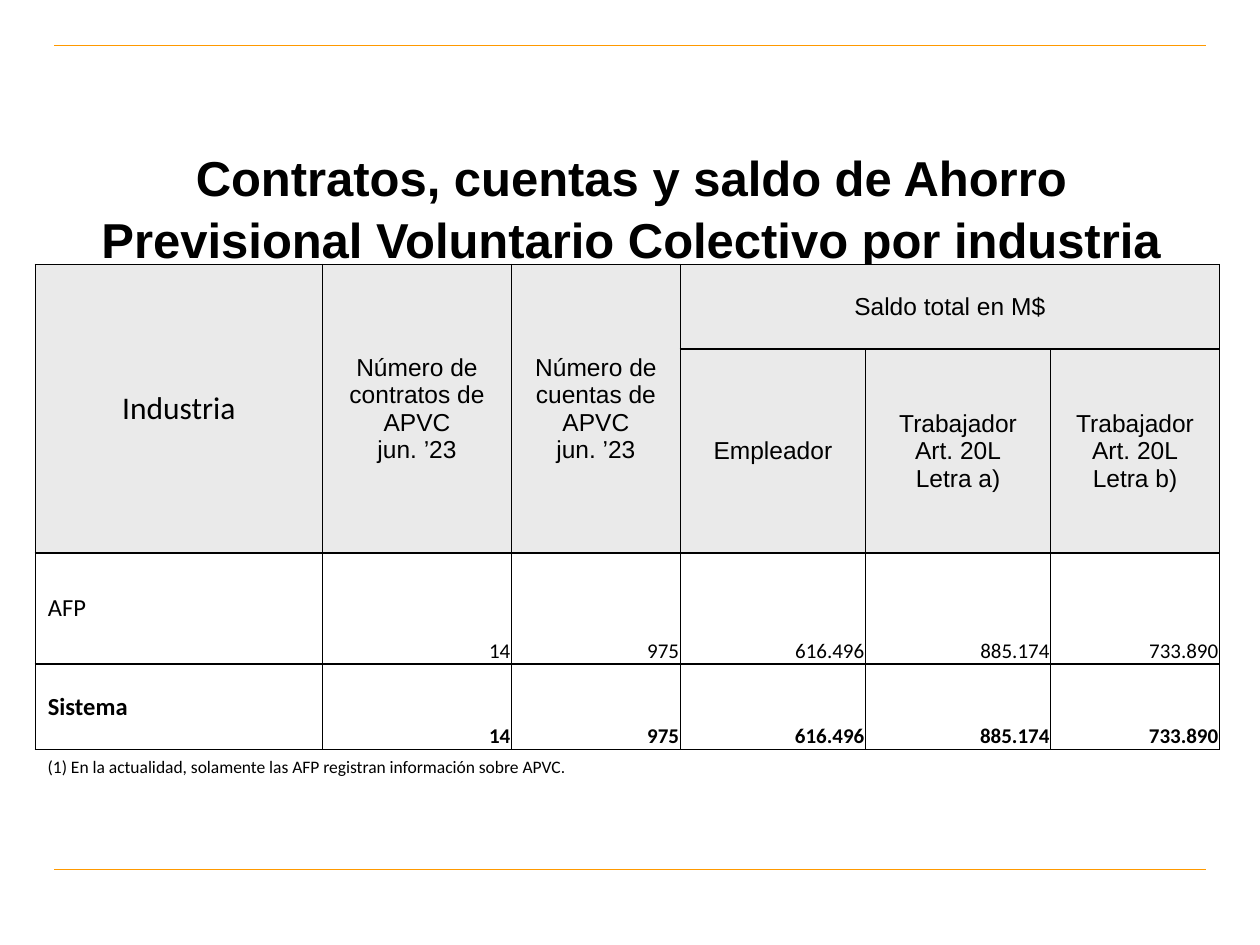
"""Build the slide on collective voluntary pension savings by industry."""
from dataclasses import dataclass

from lxml import etree
from pptx import Presentation
from pptx import util as u
from pptx.dml.color import RGBColor
from pptx.enum import shapes, text
from pptx.oxml import ns

COLORS = {"ink": "000000", "header": "EAEAEA", "body": "FFFFFF", "rule": "FF9900"}
COLUMN_WIDTHS = (2.28, 1.5, 1.34, 1.47, 1.47, 1.34)
ROW_HEIGHTS = (0.67, 1.62, 0.88, 0.68)
AMOUNTS = ("14", "975", "616.496", "885.174", "733.890")
LABEL_INSETS = (0.1, 0.05, 0.1, 0.05)
AMOUNT_INSETS = (0.01, 0.01, 0.01, 0)


@dataclass(frozen=True)
class Heading:
    row: int
    column: int
    lines: tuple[str, ...]
    rows: int = 1
    columns: int = 1
    size: int = 14
    font: str = "Arial"


HEADINGS = (
    Heading(0, 0, ("Industria",), rows=2, size=18, font="Calibri"),
    Heading(0, 1, ("Número de contratos de APVC", "jun. ’23"), rows=2),
    Heading(0, 2, ("Número de cuentas de APVC", "jun. ’23"), rows=2),
    Heading(0, 3, ("Saldo total en M$",), columns=3),
    Heading(1, 3, ("Empleador",)),
    Heading(1, 4, ("Trabajador", "Art. 20L", "Letra a)")),
    Heading(1, 5, ("Trabajador", "Art. 20L", "Letra b)")),
)


def add_run(paragraph, words: str, *, size: float, font: str = "Calibri",
            bold: bool = False) -> None:
    """Append a formatted run to a paragraph."""
    run = paragraph.add_run()
    run.text = words
    run.font.size = u.Pt(size)
    run.font.name = font
    run.font.bold = bold
    run.font.color.rgb = RGBColor.from_string(COLORS["ink"])


def write(frame, lines: tuple[str, ...], *, align=text.PP_ALIGN.LEFT, **style) -> None:
    """Fill a text frame with one paragraph per line."""
    for index, line in enumerate(lines):
        paragraph = frame.paragraphs[0] if index == 0 else frame.add_paragraph()
        paragraph.alignment = align
        add_run(paragraph, line, **style)


def add_rule(slide, top: float) -> None:
    """Draw a thin horizontal rule across the slide."""
    rule = slide.shapes.add_connector(
        shapes.MSO_CONNECTOR.STRAIGHT,
        u.Inches(0.43), u.Inches(top), u.Inches(9.57), u.Inches(top))
    rule.line.color.rgb = RGBColor.from_string(COLORS["rule"])
    rule.line.width = u.Pt(0.75)
    etree.SubElement(rule._element.spPr, ns.qn("a:effectLst"))


def format_cell(cell, fill: str) -> None:
    """Give a cell its borders and background."""
    properties = cell._tc.get_or_add_tcPr()
    for side in ("lnL", "lnR", "lnT", "lnB"):
        border = etree.SubElement(properties, ns.qn(f"a:{side}"), w=str(u.Pt(1)))
        solid = etree.SubElement(border, ns.qn("a:solidFill"))
        etree.SubElement(solid, ns.qn("a:srgbClr"), val=COLORS["ink"])
    cell.fill.solid()
    cell.fill.fore_color.rgb = RGBColor.from_string(COLORS[fill])


def place_text(cell, insets: tuple[float, ...], anchor) -> None:
    """Set a cell's insets and vertical alignment."""
    (cell.margin_left, cell.margin_top,
     cell.margin_right, cell.margin_bottom) = map(u.Inches, insets)
    cell.vertical_anchor = anchor


def add_savings_table(slide) -> None:
    """Add the table of contracts, accounts and balances."""
    table = slide.shapes.add_table(
        len(ROW_HEIGHTS), len(COLUMN_WIDTHS), u.Inches(0.28), u.Inches(2.1),
        u.Inches(sum(COLUMN_WIDTHS)), u.Inches(sum(ROW_HEIGHTS))).table
    table.first_row = table.horz_banding = False
    for column, width in zip(table.columns, COLUMN_WIDTHS):
        column.width = u.Inches(width)
    for index, (row, height) in enumerate(zip(table.rows, ROW_HEIGHTS)):
        row.height = u.Inches(height)
        for cell in row.cells:
            format_cell(cell, "header" if index < 2 else "body")

    for heading in HEADINGS:
        cell = table.cell(heading.row, heading.column)
        if heading.rows * heading.columns > 1:
            cell.merge(table.cell(heading.row + heading.rows - 1,
                                  heading.column + heading.columns - 1))
        place_text(cell, LABEL_INSETS, text.MSO_ANCHOR.MIDDLE)
        write(cell.text_frame, heading.lines, align=text.PP_ALIGN.CENTER,
              size=heading.size, font=heading.font)

    for row, (industry, bold) in enumerate((("AFP", False), ("Sistema", True)), 2):
        label = table.cell(row, 0)
        place_text(label, LABEL_INSETS, text.MSO_ANCHOR.MIDDLE)
        write(label.text_frame, (industry,), size=14, bold=bold)
        for column, amount in enumerate(AMOUNTS, 1):
            cell = table.cell(row, column)
            place_text(cell, AMOUNT_INSETS, text.MSO_ANCHOR.BOTTOM)
            write(cell.text_frame, (amount,), align=text.PP_ALIGN.RIGHT,
                  size=12, bold=bold)


def add_title(slide) -> None:
    """Place and format the slide title."""
    title = slide.shapes.title
    title.left, title.top = u.Inches(0.51), u.Inches(1.16)
    title.width, title.height = u.Inches(9), u.Inches(1.25)
    frame = title.text_frame
    frame.word_wrap = True
    frame.auto_size = text.MSO_AUTO_SIZE.NONE
    frame.vertical_anchor = text.MSO_ANCHOR.MIDDLE
    frame.margin_bottom = u.Inches(0.34)
    write(frame, ("Contratos, cuentas y saldo de Ahorro Previsional Voluntario "
                  "Colectivo por industria",),
          align=text.PP_ALIGN.CENTER, size=28, font="Arial", bold=True)
    frame.paragraphs[0].line_spacing = 1.05


def add_footnote(slide) -> None:
    """Add the note under the table."""
    note = slide.shapes.add_textbox(
        u.Inches(0.28), u.Inches(5.95), u.Inches(9.41), u.Inches(0.27))
    frame = note.text_frame
    frame.word_wrap = True
    frame.auto_size = text.MSO_AUTO_SIZE.SHAPE_TO_FIT_TEXT
    write(frame, ("(1) En la actualidad, solamente las AFP registran "
                  "información sobre APVC",), size=10)
    add_run(frame.paragraphs[0], ".", size=10, font="Arial")


def main() -> None:
    """Build and save the presentation."""
    deck = Presentation()
    deck.slide_width, deck.slide_height = u.Inches(10), u.Inches(7.5)
    slide = deck.slides.add_slide(deck.slide_layouts[5])
    for top in (0.36, 6.9):
        add_rule(slide, top)
    add_title(slide)
    add_savings_table(slide)
    add_footnote(slide)
    deck.save("out.pptx")


if __name__ == "__main__":
    main()
